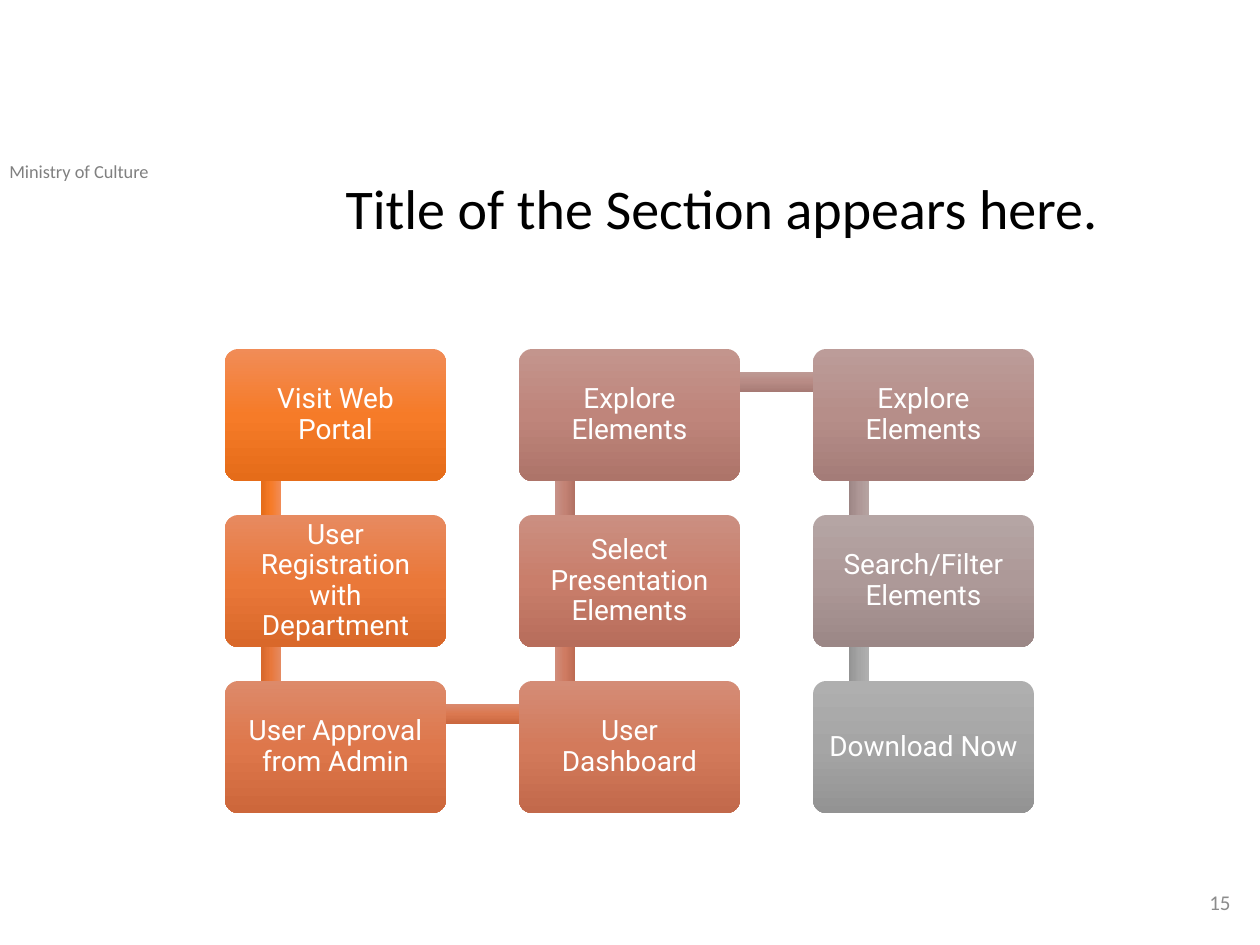
from copy import deepcopy

from pptx import Presentation
from pptx.dml.color import RGBColor
from pptx.enum.shapes import MSO_SHAPE
from pptx.enum.text import MSO_ANCHOR, MSO_AUTO_SIZE, PP_ALIGN
from pptx.oxml.ns import qn
from pptx.util import Emu, Pt

TITLE = "Title of the Section appears here."
OWNER = "Ministry of Culture"
NUMBER = "15"

# Label, column, row, box gradient, gradient of the bar to the next step
STEPS = [
    ("Visit Web Portal", 0, 0, "F18C57 F67B28 E56C19", "F18C57 F67B28 E56C19"),
    ("User Registration with Department", 0, 1,
     "E78A60 EA7839 D9682A", "E58A61 E8783C D7682C"),
    ("User Approval from Admin", 0, 2,
     "DD8A6A DE774B CD673B", "DA8A6E DB7850 CA673F"),
    ("User Dashboard", 1, 2, "D48C76 D37A5B C2694B", "D08D7B CF7B62 BD6B52"),
    ("Select Presentation Elements", 1, 1,
     "CB8F81 C97E6B B76D5B", "C79288 C38274 B17163"),
    ("Explore Elements", 1, 0, "C3958D BF857B AD7469", "BE9A95 B88B85 A67A74"),
    ("Explore Elements", 2, 0, "BC9C99 B68E89 A47C78", "B6A4A2 AE9796 9C8584"),
    ("Search/Filter Elements", 2, 1,
     "B5A5A4 AD9998 9B8786", "AFAFAF A5A5A5 939393"),
    ("Download Now", 2, 2, "AFAFAF A5A5A5 939393", None),
]

WHITE = RGBColor(255, 255, 255)
BLACK = RGBColor(0, 0, 0)
GRAY = RGBColor(0x80, 0x80, 0x80)
PALE = RGBColor(0x8C, 0x8C, 0x8C)

LEFT, TOP = 225, 349
WIDE, HIGH = 221, 132
STEP_X, STEP_Y = 294, 166
HOOK_X, HOOK_Y = 46, 33  # where bars meet, from a box's corner
THICK = 20


def px(n):
    return Emu(round(n * 914400 / 126))


def place(shape, *area):
    shape.left, shape.top, shape.width, shape.height = map(px, area)


def write(shape, text, font, size, color, align, anchor):
    frame = shape.text_frame
    frame.text = text
    frame.word_wrap = True
    frame.auto_size = MSO_AUTO_SIZE.NONE
    frame.vertical_anchor = anchor
    para = frame.paragraphs[0]
    para.alignment = align
    face = para.runs[0].font
    face.name, face.size, face.color.rgb = font, Pt(size), color
    return para


def block(slide, kind, area, shades):
    """Add a borderless shape with a three-stop vertical gradient."""
    shape = slide.shapes.add_shape(kind, *map(px, area))
    shape.shadow.inherit = False
    shape.line.fill.background()
    fill = shape.fill
    fill.gradient()
    fill.gradient_angle = 270
    stops = shape._element.spPr.find(".//" + qn("a:gsLst"))
    stops.append(deepcopy(stops[-1]))
    for i, (stop, shade) in enumerate(zip(fill.gradient_stops, shades.split())):
        stop.position = i / 2
        stop.color.rgb = RGBColor.from_string(shade)
    return shape


def corner(step):
    return LEFT + step[1] * STEP_X, TOP + step[2] * STEP_Y


def join(slide, start, end):
    """Add the bar between the hooks of two steps."""
    (x1, y1), (x2, y2) = corner(start), corner(end)
    size = abs(x2 - x1) + abs(y2 - y1)
    mid_x, mid_y = (x1 + x2) / 2 + HOOK_X, (y1 + y2) / 2 + HOOK_Y
    area = mid_x - size / 2, mid_y - THICK / 2, size, THICK
    bar = block(slide, MSO_SHAPE.RECTANGLE, area, start[4])
    if y1 != y2:
        bar.rotation = 90 if y2 > y1 else 270


def card(slide, step):
    box = block(slide, MSO_SHAPE.ROUNDED_RECTANGLE,
                (*corner(step), WIDE, HIGH), step[3])
    box.adjustments[0] = 0.1
    para = write(box, step[0], "Roboto", 16, WHITE,
                 PP_ALIGN.CENTER, MSO_ANCHOR.MIDDLE)
    para.line_spacing = 0.9
    frame = box.text_frame
    frame.margin_left = frame.margin_right = px(9)
    frame.margin_top = frame.margin_bottom = px(9)


def main():
    deck = Presentation()
    deck.slide_width, deck.slide_height = px(1260), px(945)
    slide = deck.slides.add_slide(deck.slide_layouts[5])

    title = slide.shapes.title
    place(title, 333, 175, 824, 100)
    para = write(title, TITLE, "Calibri", 32, BLACK,
                 PP_ALIGN.LEFT, MSO_ANCHOR.TOP)
    para.line_spacing = 0.9

    owner = slide.shapes.add_textbox(*map(px, (-3, 154, 275, 35)))
    write(owner, OWNER, "Calibri", 10.5, GRAY, PP_ALIGN.LEFT, MSO_ANCHOR.TOP)

    for i, step in enumerate(STEPS):
        if step[4]:
            join(slide, step, STEPS[i + 1])
        card(slide, step)

    number = slide.shapes.add_textbox(*map(px, (960, 877, 283, 50)))
    write(number, NUMBER, "Calibri", 12, PALE,
          PP_ALIGN.RIGHT, MSO_ANCHOR.MIDDLE)

    deck.save("out.pptx")


if __name__ == "__main__":
    main()
